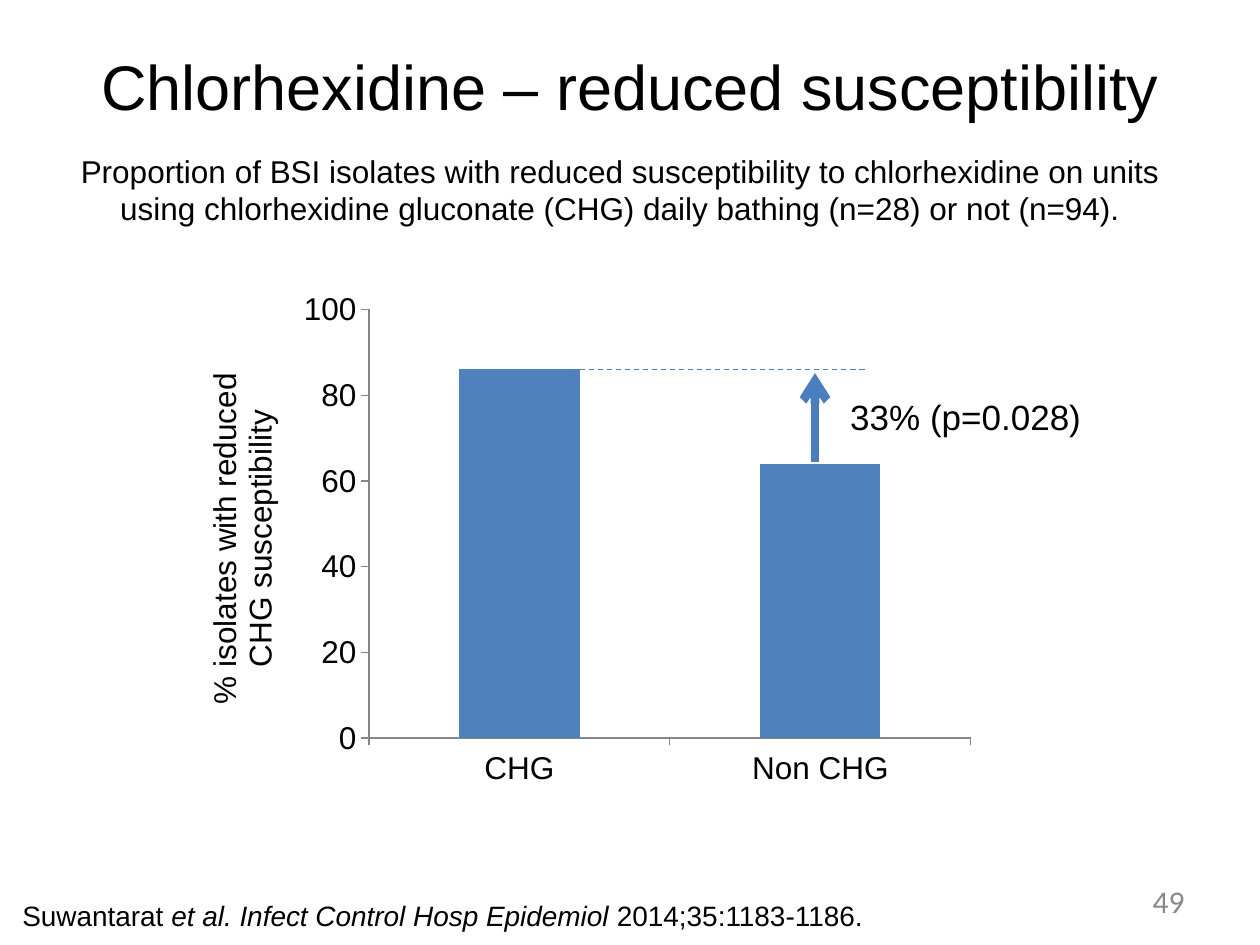
"""Build a slide on reduced chlorhexidine susceptibility with an annotated column chart."""
from lxml.etree import SubElement, fromstring
from pptx import Presentation
from pptx.chart.data import CategoryChartData
from pptx.dml.color import RGBColor
from pptx.enum.chart import XL_CHART_TYPE, XL_TICK_MARK
from pptx.enum.dml import MSO_LINE
from pptx.enum.shapes import MSO_CONNECTOR
from pptx.enum.text import MSO_ANCHOR, PP_ALIGN
from pptx.oxml.ns import nsdecls, qn
from pptx.util import Cm, Pt

COLORS = {"text": "000000", "bar": "4F81BD", "line": "4B7EBC", "axis": "868686", "number": "898989"}


def style_font(font, size, color="text", name="Arial"):
    font.size = Pt(size)
    font.name = name
    font.bold = False
    font.color.rgb = RGBColor.from_string(COLORS[color])


def fill_text(box, spans, size, align, anchor, color="text", name="Arial"):
    frame = box.text_frame
    frame.word_wrap = True
    frame.vertical_anchor = anchor
    para = frame.paragraphs[0]
    para.alignment = align
    style_font(para.font, size, color, name)
    for text, italic in spans:
        span = para.add_run()
        span.text = text
        if italic:
            span.font.italic = True


deck = Presentation()
deck.slide_width, deck.slide_height = Cm(25.4), Cm(19.05)
page = deck.slides.add_slide(deck.slide_layouts[5])

title = page.shapes.title
title.left, title.top, title.width, title.height = Cm(1.27), Cm(0.13), Cm(22.86), Cm(3.18)
fill_text(title, [("Chlorhexidine – reduced susceptibility", False)], 36, PP_ALIGN.CENTER, MSO_ANCHOR.MIDDLE)

data = CategoryChartData()
data.categories = ["CHG", "Non CHG"]
data.add_series("Series 1", [86, 64])
chart = page.shapes.add_chart(
    XL_CHART_TYPE.COLUMN_CLUSTERED, Cm(3.5), Cm(5.72), Cm(16.4), Cm(10.41), data
).chart
chart.has_legend = False
chart.has_title = False
style_font(chart.font, 18)
plot = chart.plots[0]
plot.gap_width = 150
plot.vary_by_categories = False
bars = plot.series[0].format.fill
bars.solid()
bars.fore_color.rgb = RGBColor.from_string(COLORS["bar"])

for axis in (chart.category_axis, chart.value_axis):
    axis.has_major_gridlines = False
    axis.major_tick_mark = XL_TICK_MARK.OUTSIDE
    axis.minor_tick_mark = XL_TICK_MARK.NONE
    axis.format.line.color.rgb = RGBColor.from_string(COLORS["axis"])
    axis.format.line.width = Pt(0.75)
values = chart.value_axis
values.minimum_scale, values.maximum_scale, values.major_unit = 0, 100, 20
para = values.axis_title.text_frame.paragraphs[0]
para.text = "% isolates with reduced CHG susceptibility"
style_font(para.font, 18)

area = chart.plots[0]._element.getparent()
for old in area.findall(qn("c:layout")):
    area.remove(old)
layout = fromstring(f"<c:layout {nsdecls('c')}/>")
area.insert(0, layout)
manual = SubElement(layout, qn("c:manualLayout"))
for tag, value in [("layoutTarget", "inner"), ("xMode", "edge"), ("yMode", "edge"),
                   ("x", "0.24"), ("y", "0.05"), ("w", "0.74"), ("h", "0.83")]:
    SubElement(manual, qn(f"c:{tag}"), val=value)

lines = []
for x1, y1, x2, y2, width in [(11.5, 7.45, 17.5, 7.45, 0.75), (16.43, 9.32, 16.43, 7.52, 5)]:
    line = page.shapes.add_connector(MSO_CONNECTOR.STRAIGHT, Cm(x1), Cm(y1), Cm(x2), Cm(y2))
    line.line.color.rgb = RGBColor.from_string(COLORS["line"])
    line.line.width = Pt(width)
    SubElement(line._element.spPr, qn("a:effectLst"))
    lines.append(line)
level, arrow = lines
level.line.dash_style = MSO_LINE.DASH
SubElement(arrow.line._get_or_add_ln(), qn("a:tailEnd"), type="arrow")

citation = [("Suwantarat ", False), ("et al. Infect Control Hosp Epidemiol", True), (" 2014;35:1183-1186.", False)]
summary = [("Proportion of BSI isolates with reduced susceptibility to chlorhexidine on units "
            "using chlorhexidine gluconate (CHG) daily bathing (n=28) or not (n=94).", False)]
left, center, right = PP_ALIGN.LEFT, PP_ALIGN.CENTER, PP_ALIGN.RIGHT
top, middle = MSO_ANCHOR.TOP, MSO_ANCHOR.MIDDLE
for place, spans, size, align, anchor, color, name in [
    ((0.2, 17.98, 17.8, 0.94), citation, 16, left, top, "text", "Arial"),
    ((1.3, 2.92, 22.4, 1.8), summary, 18, center, middle, "text", "Arial"),
    ((16.89, 7.85, 6.4, 1.11), [("33% (p=0.028)", False)], 20, left, middle, "text", "Arial"),
    ((18.2, 17.66, 5.93, 1.01), [("49", False)], 18, right, middle, "number", "Calibri"),
]:
    box = page.shapes.add_textbox(*map(Cm, place))
    fill_text(box, spans, size, align, anchor, color, name)

deck.save("out.pptx")
